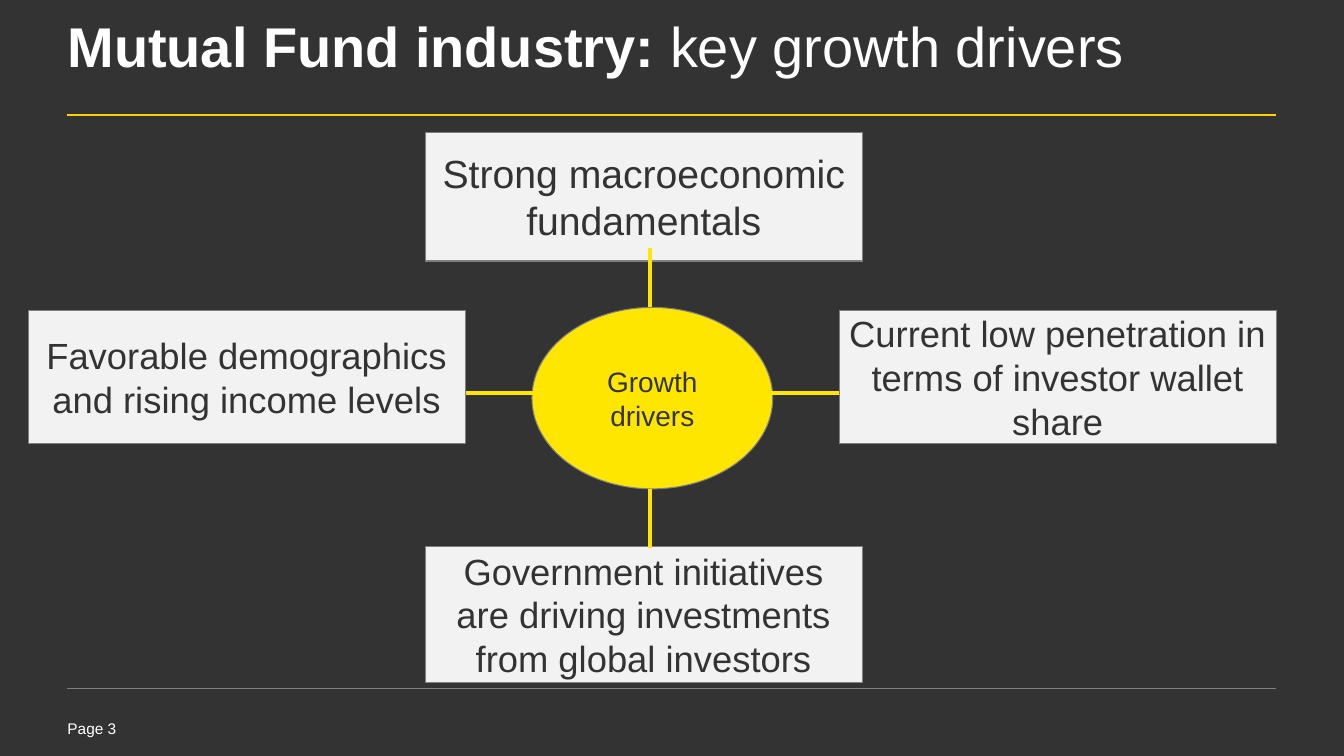
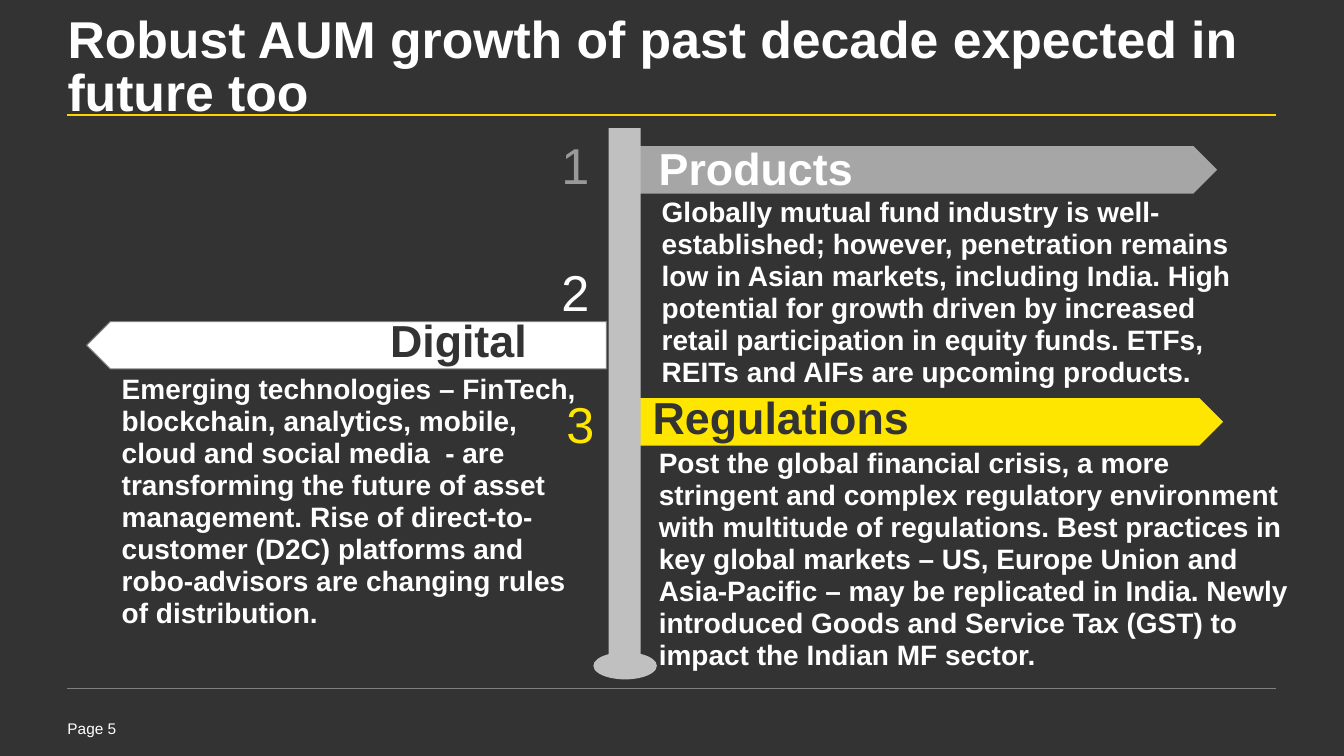
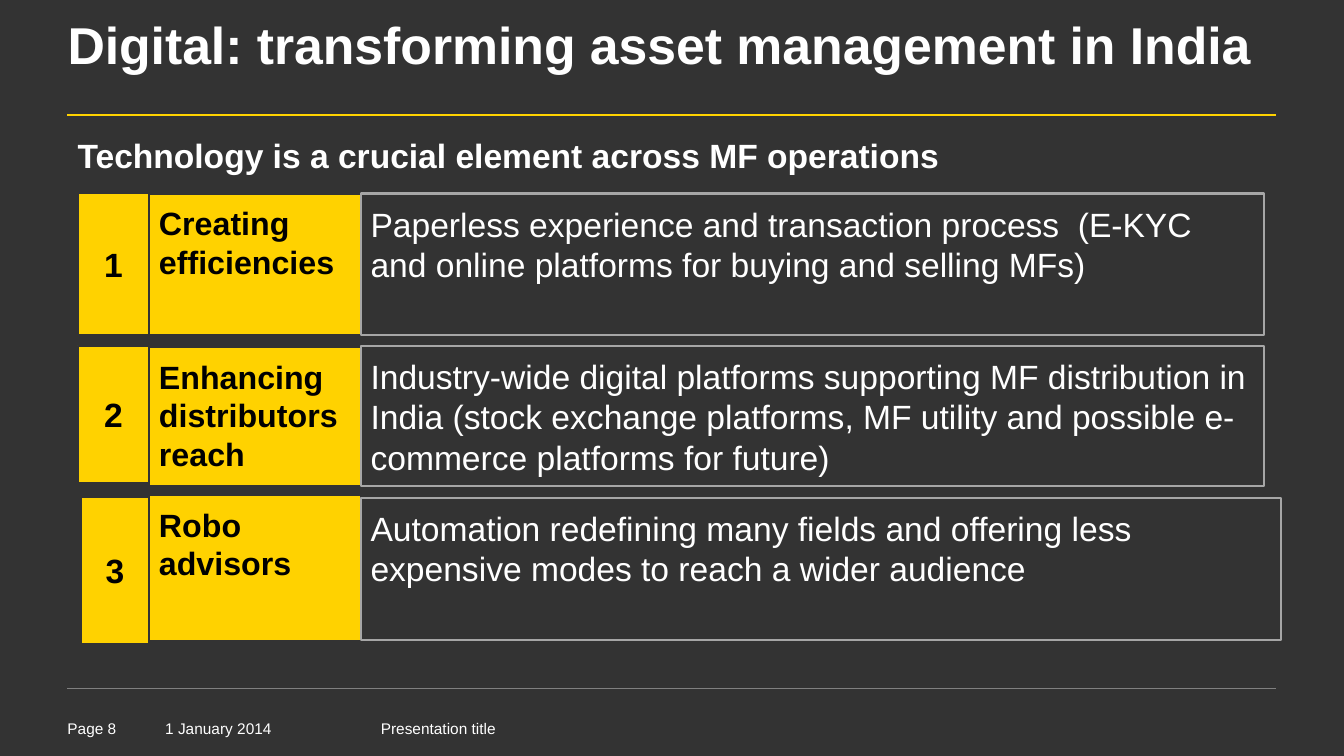
from lxml import etree
from pptx import Presentation
from pptx import util as u
from pptx.dml.color import RGBColor
from pptx.enum import shapes, text
from pptx.oxml.ns import qn

PX = u.Inches(1) // 100
FONT = "Arial"
COLORS = {
    "background": "333333", "white": "FFFFFF", "black": "000000",
    "gold": "FFD200", "yellow": "FFE600", "pale": "F2F2F2",
    "border": "808080", "number": "999999", "band": "A6A6A6", "pole": "C0C0C0",
}
LEFT, CENTER, RIGHT = text.PP_ALIGN.LEFT, text.PP_ALIGN.CENTER, text.PP_ALIGN.RIGHT
TOP, MIDDLE = text.MSO_ANCHOR.TOP, text.MSO_ANCHOR.MIDDLE
RECTANGLE = shapes.MSO_SHAPE.RECTANGLE
OVAL = shapes.MSO_SHAPE.OVAL
PENTAGON = shapes.MSO_SHAPE.PENTAGON


def color(name):
    return RGBColor.from_string(COLORS[name])


def lengths(*pixels):
    return [u.Emu(pixel * PX) for pixel in pixels]


class Deck:
    def __init__(self):
        self.presentation = Presentation()
        self.presentation.slide_width, self.presentation.slide_height = lengths(1334, 750)
        fill = self.presentation.slide_master.background.fill
        fill.solid()
        fill.fore_color.rgb = color("background")
        self.slide = None

    def new_slide(self, page, title, title_rest="", size=37, title_top=22):
        """Start a slide with a bold title, optional regular text after it, rules and page number."""
        self.slide = self.presentation.slides.add_slide(self.presentation.slide_layouts[5])
        shape = self.slide.shapes.title
        shape.left, shape.top, shape.width, shape.height = lengths(67, title_top, 1201, 94)
        self.set_text(shape.text_frame, title, size, bold=True, spacing=0.85,
                      insets=(0, 0, 0, 0))
        if title_rest:
            run = shape.text_frame.paragraphs[0].add_run()
            run.text = title_rest
            run.font.bold = False
        self.line((67, 114), (1267, 114), "gold", 1.5)
        self.line((67, 683), (1267, 683), "border", 0.25)
        self.footer(67, 97, f"Page {page}")

    def set_text(self, frame, content, size, ink="white", bold=False, align=LEFT, anchor=TOP,
                 spacing=None, after=0, insets=(10, 5, 10, 5), wrap=True):
        frame.auto_size = text.MSO_AUTO_SIZE.NONE
        frame.word_wrap = wrap
        frame.vertical_anchor = anchor
        (frame.margin_left, frame.margin_top,
         frame.margin_right, frame.margin_bottom) = lengths(*insets)
        paragraph = frame.paragraphs[0]
        paragraph.add_run().text = content
        paragraph.alignment = align
        paragraph.space_before = u.Pt(0)
        paragraph.space_after = u.Pt(after)
        if spacing:
            paragraph.line_spacing = spacing
        font = paragraph.font
        font.name, font.size, font.bold = FONT, u.Pt(size), bold
        font.color.rgb = color(ink)

    def label(self, box, content, size, **style):
        frame = self.slide.shapes.add_textbox(*lengths(*box)).text_frame
        self.set_text(frame, content, size, **style)

    def footer(self, left, width, content):
        self.label((left, 713, width, 22), content, 11, insets=(0, 0, 0, 0))

    def shape(self, kind, box, fill=None, outline=None, weight=0.75):
        shape = self.slide.shapes.add_shape(kind, *lengths(*box))
        shape.shadow.inherit = False
        if fill:
            shape.fill.solid()
            shape.fill.fore_color.rgb = color(fill)
        else:
            shape.fill.background()
        if outline:
            shape.line.color.rgb = color(outline)
            shape.line.width = u.Pt(weight)
        else:
            shape.line.fill.background()
        return shape

    def line(self, start, end, ink, weight):
        connector = self.slide.shapes.add_connector(
            shapes.MSO_CONNECTOR.STRAIGHT, *lengths(*start, *end))
        connector.line.color.rgb = color(ink)
        connector.line.width = u.Pt(weight)
        etree.SubElement(connector._element.spPr, qn("a:effectLst"))

    def heading(self, box, content, **style):
        self.label(box, content, 32, bold=True, spacing=0.95, after=8, **style)

    def body(self, box, content):
        self.label(box, content, 20, bold=True, spacing=0.95, after=8)


def growth_drivers(deck):
    deck.new_slide(3, "Mutual Fund industry: ", "key growth drivers", size=40)
    hub = deck.shape(OVAL, (528, 305, 239, 180), "yellow", "border")
    deck.set_text(hub.text_frame, "Growth drivers", 20, "background", align=CENTER, anchor=MIDDLE)
    drivers = [
        (422, 131, 128, 28, "Strong macroeconomic fundamentals"),
        (833, 308, 132, 26, "Current low penetration in terms of investor wallet share"),
        (28, 308, 132, 26, "Favorable demographics and rising income levels"),
        (422, 542, 135, 26,
         "Government initiatives are driving investments from global investors"),
    ]
    for left, top, height, size, content in drivers:
        driver = deck.shape(RECTANGLE, (left, top, 434, height), "pale", "border")
        deck.set_text(driver.text_frame, content, size, "background", align=CENTER, anchor=MIDDLE)
    spokes = [((645, 305), (645, 246)), ((645, 544), (645, 485)),
              ((833, 390), (765, 390)), ((531, 390), (463, 390))]
    for start, end in spokes:
        deck.line(start, end, "yellow", 3)


def future_growth(deck):
    deck.new_slide(5, "Robust AUM growth of past decade expected in future too", title_top=16)
    deck.shape(PENTAGON, (615, 395, 599, 47), "yellow")
    deck.shape(PENTAGON, (609, 145, 599, 47), "band")
    deck.shape(OVAL, (589, 647, 63, 27), "pole")
    deck.shape(RECTANGLE, (604, 127, 32, 531), "pole")
    deck.shape(PENTAGON, (86, 319, 516, 47), "white", "border").rotation = 180

    numbers = [("1", 557, 138, "number"), ("2", 557, 264, "white"), ("3", 562, 395, "yellow")]
    for number, left, top, ink in numbers:
        deck.label((left, top, 28, 56), number, 36, ink=ink, align=CENTER, spacing=0.85,
                   after=6, insets=(0, 4, 0, 0), wrap=False)

    deck.heading((644, 139, 313, 61), "Products")
    deck.heading((273, 309, 260, 61), "Digital", ink="background", align=RIGHT)
    deck.heading((638, 386, 313, 61), "Regulations", ink="background")

    deck.body((647, 191, 620, 236),
              "Globally mutual fund industry is well-established; however, penetration remains "
              "low in Asian markets, including India. High potential for growth driven by "
              "increased retail participation in equity funds. ETFs, REITs and AIFs are "
              "upcoming products.")
    deck.body((111, 366, 478, 266),
              "Emerging technologies – FinTech, blockchain, analytics, mobile, cloud and social "
              "media  - are transforming the future of asset management. Rise of "
              "direct-to-customer (D2C) platforms and robo-advisors are changing rules of "
              "distribution.")
    deck.body((644, 440, 651, 234),
              "Post the global financial crisis, a more stringent and complex regulatory "
              "environment with multitude of regulations. Best practices in key global markets "
              "– US, Europe Union and Asia-Pacific – may be replicated in India. Newly "
              "introduced Goods and Service Tax (GST) to impact the Indian MF sector.")


def digital(deck):
    deck.new_slide(8, "Digital: transforming asset management in India")
    deck.footer(164, 150, "1 January 2014")
    deck.footer(378, 501, "Presentation title")
    deck.label((77, 136, 1191, 38), "Technology is a crucial element across MF operations", 24,
               bold=True, spacing=0.85, after=6, insets=(0, 4, 0, 0))
    insets = (10, 10, 10, 10)
    # Each row: number left, top, height; label top, height; description top, width, height
    rows = [
        ((77, 191, 141), (192, 140), (192, 897, 140), "Creating efficiencies",
         "Paperless experience and transaction process  (E-KYC and online platforms for buying "
         "and selling MFs)"),
        ((77, 343, 136), (344, 138), (343, 897, 139), "Enhancing distributors reach",
         "Industry-wide digital platforms supporting MF distribution in India (stock exchange "
         "platforms, MF utility and possible e-commerce platforms for future)"),
        ((80, 493, 146), (491, 145), (494, 914, 141), "Robo advisors",
         "Automation redefining many fields and offering less expensive modes to reach a wider "
         "audience"),
    ]
    for number, (number_box, label_box, detail_box, name, description) in enumerate(rows, 1):
        left, top, height = number_box
        label_top, label_height = label_box
        label = deck.shape(RECTANGLE, (148, label_top, 210, label_height),
                           "gold", "background", 1.5)
        deck.set_text(label.text_frame, name, 23, "black", bold=True, insets=insets)
        detail = deck.shape(RECTANGLE, (358, *detail_box), None, "band", 1.5)
        deck.set_text(detail.text_frame, description, 24, insets=insets)
        badge = deck.shape(RECTANGLE, (left, top, 148 - left, height),
                           "gold", "background", 1.5)
        deck.set_text(badge.text_frame, str(number), 24, "black", bold=True, align=CENTER,
                      anchor=MIDDLE, insets=insets)


def main():
    deck = Deck()
    growth_drivers(deck)
    future_growth(deck)
    digital(deck)
    deck.presentation.save("out.pptx")


if __name__ == "__main__":
    main()
